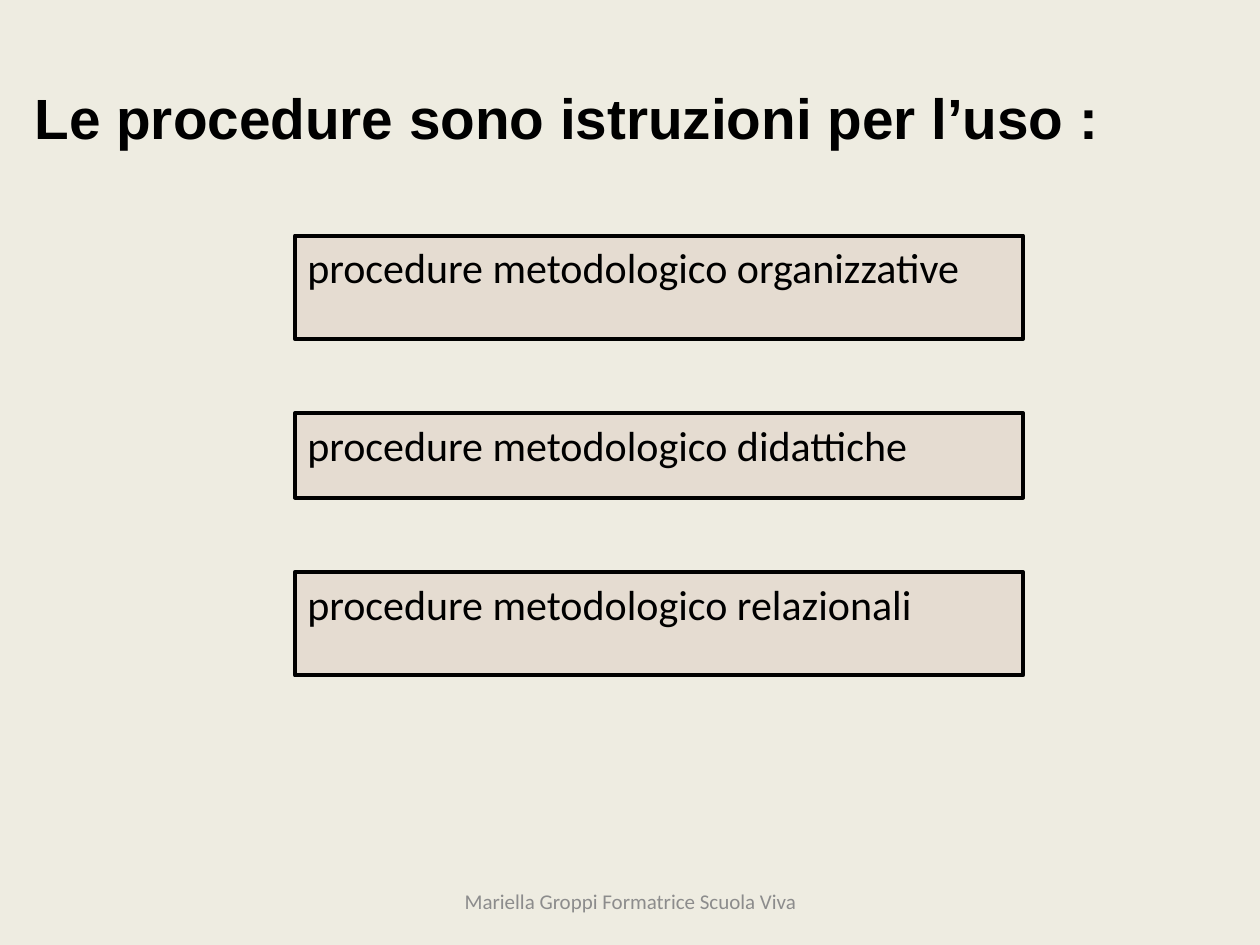
from pptx import Presentation
from pptx.dml.color import RGBColor
from pptx.enum import shapes, text
from pptx.util import Inches, Pt

# Content
TITLE = "Le procedure sono istruzioni per l’uso :"
PROCEDURES = [  # wording, box height
    ("procedure metodologico organizzative", 0.82),
    ("procedure metodologico didattiche", 0.67),
    ("procedure metodologico relazionali", 0.82),
]
FOOTER = "Mariella Groppi Formatrice Scuola Viva"

# Layout in inches
BOX_LEFT, BOX_TOP, BOX_WIDTH, BOX_GAP = 2.34, 1.87, 5.78, 0.59

BACKGROUND = RGBColor(0xEE, 0xEC, 0xE1)
BOX_FILL = RGBColor(0xE5, 0xDC, 0xD1)
BLACK = RGBColor(0, 0, 0)
GREY = RGBColor(0x8C, 0x8C, 0x8C)


def write(shape, wording, font, size, color, align, anchor, bold=False):
    frame = shape.text_frame
    frame.word_wrap = True
    frame.auto_size = text.MSO_AUTO_SIZE.NONE
    frame.vertical_anchor = anchor
    paragraph = frame.paragraphs[0]
    paragraph.alignment = align
    run = paragraph.add_run()
    run.text = wording
    run.font.name = font
    run.font.size = Pt(size)
    run.font.bold = bold
    run.font.color.rgb = color


def main():
    presentation = Presentation()
    presentation.slide_width = Inches(10)
    presentation.slide_height = Inches(7.5)
    slide = presentation.slides.add_slide(presentation.slide_layouts[5])
    slide.background.fill.solid()
    slide.background.fill.fore_color.rgb = BACKGROUND

    # Title
    title = slide.shapes.title
    title.left, title.top = Inches(0), Inches(0.3)
    title.width, title.height = Inches(9), Inches(1.25)
    write(title, TITLE, "Arial", 32.4, BLACK, text.PP_ALIGN.CENTER,
          text.MSO_ANCHOR.MIDDLE, bold=True)

    # Procedure boxes, stacked with equal gaps
    top = BOX_TOP
    for wording, height in PROCEDURES:
        box = slide.shapes.add_shape(
            shapes.MSO_SHAPE.RECTANGLE, Inches(BOX_LEFT), Inches(top),
            Inches(BOX_WIDTH), Inches(height))
        box.shadow.inherit = False
        box.fill.solid()
        box.fill.fore_color.rgb = BOX_FILL
        box.line.color.rgb = BLACK
        box.line.width = Pt(2.25)
        write(box, wording, "Calibri", 24, BLACK, text.PP_ALIGN.LEFT,
              text.MSO_ANCHOR.TOP)
        top += height + BOX_GAP

    # Footer
    footer = slide.shapes.add_textbox(
        Inches(3.42), Inches(6.95), Inches(3.17), Inches(0.4))
    write(footer, FOOTER, "Calibri", 12, GREY, text.PP_ALIGN.CENTER,
          text.MSO_ANCHOR.MIDDLE)

    presentation.save("out.pptx")


if __name__ == "__main__":
    main()
